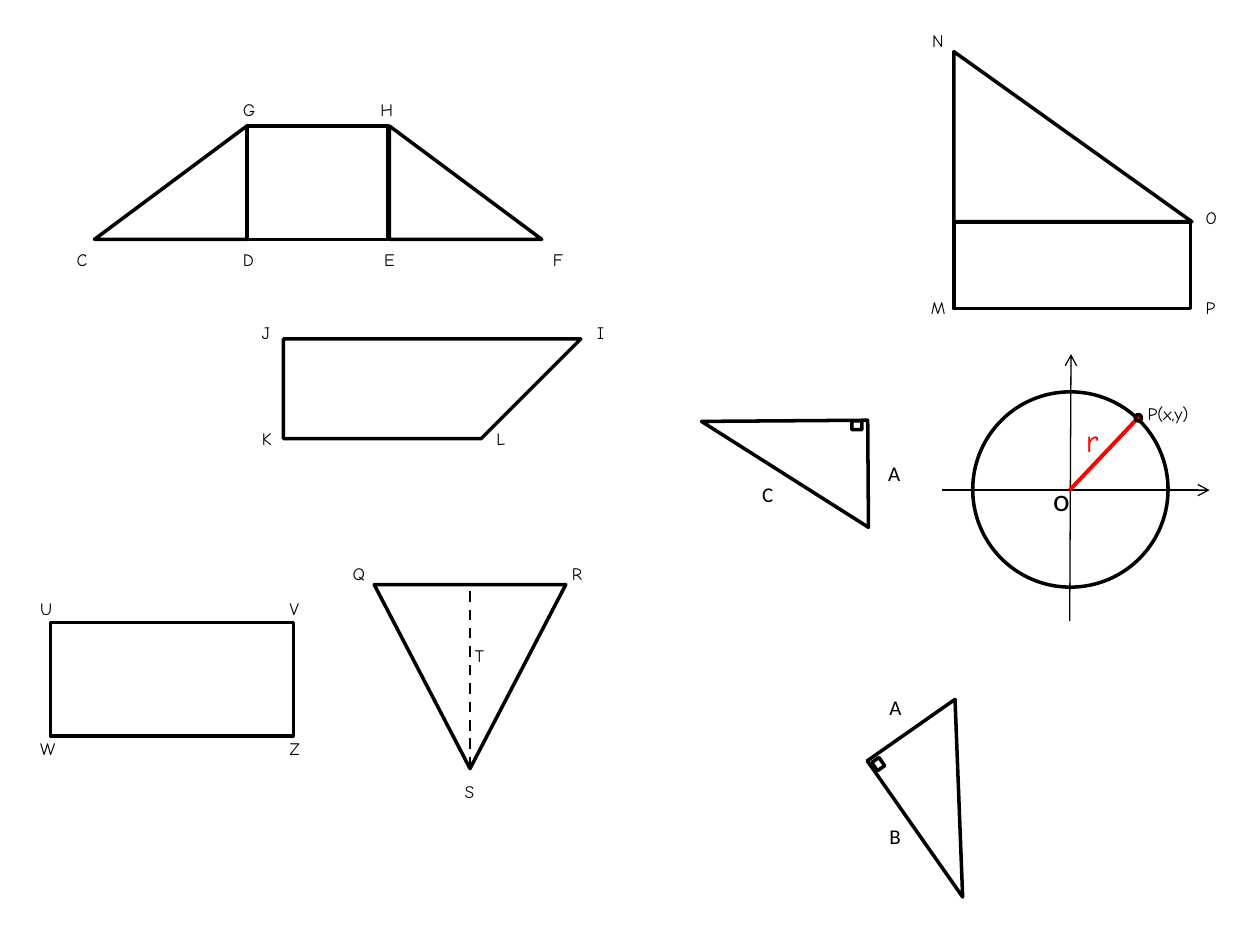
from lxml import etree
from pptx import Presentation
from pptx.dml.color import RGBColor
from pptx.enum import dml, shapes, text
from pptx.oxml.ns import qn
from pptx.util import Inches, Pt

THEME = {
    "ink": RGBColor(0, 0, 0),
    "paper": RGBColor(255, 255, 255),
    "accent": RGBColor(255, 0, 0),
    "outline": 2,
    "labels": {
        "vertex": ("Comic Neue", 10, 0.27, "ink"),
        "side": ("Calibri", 12, 0.3, "ink"),
        "origin": ("Calibri", 18, 0.4, "ink"),
        "radius": ("Comic Neue", 18, 0.4, "accent"),
    },
    "lines": {
        "axis": ("ink", 0.75, None, True),
        "radius": ("accent", 2.25, None, False),
        "height": ("ink", 1.5, dml.MSO_LINE.DASH, False),
    },
}

PRESET = shapes.MSO_SHAPE
RIGHT_TRIANGLE = PRESET.RIGHT_TRIANGLE
RECTANGLE = PRESET.RECTANGLE

FIGURES = [
    {
        "shapes": [
            (RIGHT_TRIANGLE, 6.95, 5.91, 1.32, 0.85, {"rotation": 55}),
            (RECTANGLE, 6.93, 6.03, 0.08, 0.07, {"rotation": 55, "fill": "paper"}),
        ],
        "labels": [("A", "side", 6.96, 5.46, 0.3), ("B", "side", 6.96, 6.49, 0.29)],
    },
    {
        "shapes": [
            (RIGHT_TRIANGLE, 3.09, 1, 1.21, 0.9, {}),
            (RIGHT_TRIANGLE, 0.75, 1, 1.21, 0.9, {"flip": True}),
            (RECTANGLE, 1.96, 1, 1.12, 0.9, {}),
        ],
        "labels": [
            ("C", "vertex", 0.51, 1.93, 0.29),
            ("D", "vertex", 1.83, 1.93, 0.3),
            ("E", "vertex", 2.95, 1.93, 0.29),
            ("F", "vertex", 4.29, 1.93, 0.29),
            ("G", "vertex", 1.83, 0.74, 0.3),
            ("H", "vertex", 2.92, 0.74, 0.31),
        ],
    },
    {
        "outline": [(2.25, 3.48), (3.82, 3.48), (4.61, 2.69), (2.25, 2.69)],
        "labels": [
            ("I", "vertex", 4.64, 2.51, 0.28),
            ("J", "vertex", 1.98, 2.51, 0.3),
            ("K", "vertex", 1.98, 3.35, 0.29),
            ("L", "vertex", 3.84, 3.35, 0.28),
        ],
    },
    {
        "lines": [
            ("axis", (8.49, 4.93), (8.5, 2.81)),
            ("axis", (7.48, 3.89), (9.6, 3.89)),
            ("radius", (8.49, 3.89), (9.01, 3.34)),
        ],
        "shapes": [
            (PRESET.OVAL, 7.72, 3.11, 1.55, 1.55, {}),
            (PRESET.OVAL, 9.01, 3.29, 0.05, 0.05, {"fill": "accent"}),
        ],
        "labels": [
            ("P(x,y)", "vertex", 9.01, 3.15, 0.57),
            ("o", "origin", 8.26, 3.76, 0.34),
            ("r", "radius", 8.52, 3.29, 0.32),
        ],
    },
    {
        "shapes": [
            (RIGHT_TRIANGLE, 7.57, 0.41, 1.89, 1.35, {}),
            (RECTANGLE, 7.57, 1.76, 1.88, 0.69, {}),
        ],
        "labels": [
            ("M", "vertex", 7.29, 2.31, 0.33),
            ("N", "vertex", 7.3, 0.19, 0.31),
            ("O", "vertex", 9.47, 1.59, 0.31),
            ("P", "vertex", 9.47, 2.31, 0.28),
        ],
    },
    {
        "lines": [("height", (3.73, 6.09), (3.73, 4.64))],
        "shapes": [(PRESET.ISOSCELES_TRIANGLE, 2.97, 4.64, 1.52, 1.46, {"rotation": 180})],
        "labels": [
            ("Q", "vertex", 2.7, 4.42, 0.32),
            ("R", "vertex", 4.44, 4.42, 0.29),
            ("S", "vertex", 3.59, 6.15, 0.3),
            ("T", "vertex", 3.67, 5.07, 0.3),
        ],
    },
    {
        "shapes": [(RECTANGLE, 0.4, 4.94, 1.93, 0.9, {})],
        "labels": [
            ("U", "vertex", 0.22, 4.7, 0.31),
            ("V", "vertex", 2.2, 4.7, 0.29),
            ("W", "vertex", 0.22, 5.81, 0.35),
            ("Z", "vertex", 2.2, 5.81, 0.3),
        ],
    },
    {
        "shapes": [
            (RIGHT_TRIANGLE, 5.57, 3.34, 1.32, 0.85, {"rotation": 179.6}),
            (RECTANGLE, 6.76, 3.34, 0.08, 0.07, {"rotation": 179.6, "fill": "paper"}),
        ],
        "labels": [("A", "side", 6.95, 3.61, 0.3), ("C", "side", 5.95, 3.77, 0.29)],
    },
]


def style_shape(shape, fill=None):
    shape.shadow.inherit = False
    if fill:
        shape.fill.solid()
        shape.fill.fore_color.rgb = THEME[fill]
    else:
        shape.fill.background()
    shape.line.color.rgb = THEME["ink"]
    shape.line.width = Pt(THEME["outline"])


def add_preset(group, preset, left, top, width, height, options):
    box = [Inches(value) for value in (left, top, width, height)]
    shape = group.shapes.add_shape(preset, *box)
    style_shape(shape, options.get("fill"))
    shape.rotation = options.get("rotation", 0)
    if options.get("flip"):
        shape._element.spPr.find(qn("a:xfrm")).set("flipH", "1")


def add_outline(group, points):
    start, *rest = [(Inches(x), Inches(y)) for x, y in points]
    builder = group.shapes.build_freeform(*start)
    builder.add_line_segments(rest, close=True)
    style_shape(builder.convert_to_shape())


def add_line(group, style, start, end):
    color, width, dash, arrow = THEME["lines"][style]
    ends = [Inches(value) for value in (*start, *end)]
    connector = group.shapes.add_connector(shapes.MSO_CONNECTOR.STRAIGHT, *ends)
    connector.line.color.rgb = THEME[color]
    connector.line.width = Pt(width)
    if dash:
        connector.line.dash_style = dash
    if arrow:
        etree.SubElement(connector.line._get_or_add_ln(), qn("a:tailEnd"), type="arrow")
    etree.SubElement(connector._element.spPr, qn("a:effectLst"))


def add_label(group, wording, style, left, top, width):
    font_name, size, height, color = THEME["labels"][style]
    box = [Inches(value) for value in (left, top, width, height)]
    frame = group.shapes.add_textbox(*box).text_frame
    frame.word_wrap = False
    frame.auto_size = text.MSO_AUTO_SIZE.SHAPE_TO_FIT_TEXT
    run = frame.paragraphs[0].add_run()
    run.text = wording
    run.font.name = font_name
    run.font.size = Pt(size)
    run.font.color.rgb = THEME[color]


def main():
    presentation = Presentation()
    presentation.slide_width = Inches(10)
    presentation.slide_height = Inches(7.5)
    slide = presentation.slides.add_slide(presentation.slide_layouts[6])
    for figure in FIGURES:
        group = slide.shapes.add_group_shape()
        for line in figure.get("lines", []):
            add_line(group, *line)
        for preset in figure.get("shapes", []):
            add_preset(group, *preset)
        if "outline" in figure:
            add_outline(group, figure["outline"])
        for label in figure["labels"]:
            add_label(group, *label)
    presentation.save("out.pptx")


if __name__ == "__main__":
    main()
